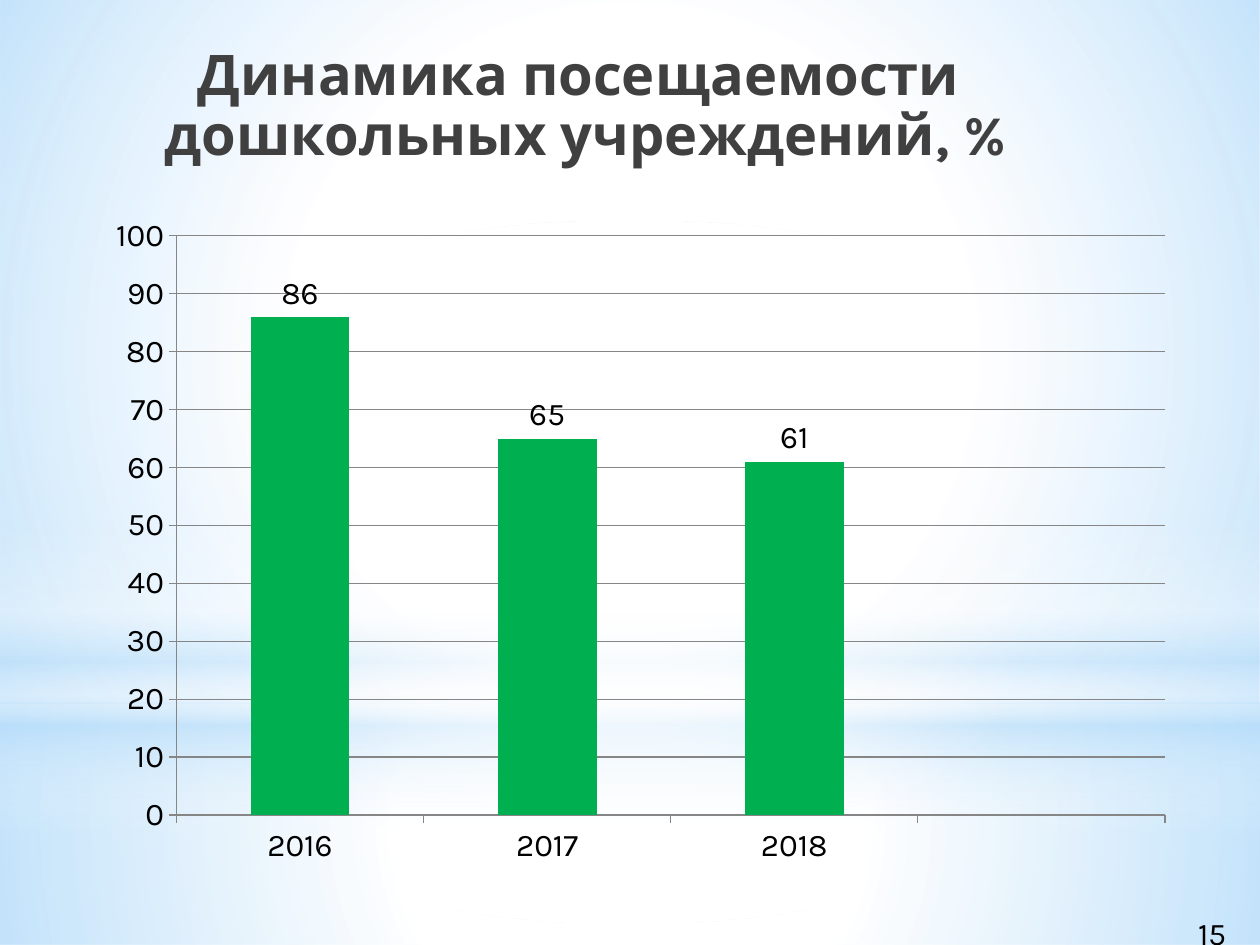
import dataclasses
import typing

import lxml.etree
import pptx
import pptx.chart.data
import pptx.dml.color
import pptx.enum.chart
import pptx.enum.shapes
import pptx.enum.text
import pptx.oxml
import pptx.oxml.ns
import pptx.util

WIDE, HIGH = 10, 7.5
FONT = "Karla"
WHITE, SKY, GREEN, GRAY, BLACK = "FFFFFF", "B4DCFA", "00B050", "868686", "000000"
KIND = pptx.enum.shapes.MSO_SHAPE


class Box(typing.NamedTuple):
    """Left, top, width and height as shares of the slide."""
    left: float
    top: float
    width: float
    height: float

    def place(self) -> list[int]:
        return [pptx.util.Inches(share * size)
                for share, size in zip(self, (WIDE, HIGH, WIDE, HIGH))]


class Stop(typing.NamedTuple):
    """Position in percent, colour and opacity in percent."""
    at: int
    color: str
    alpha: int


@dataclasses.dataclass
class Glow:
    box: Box
    stops: list[Stop]
    kind: KIND = KIND.RECTANGLE
    round: bool = True


GLOWS = [
    Glow(Box(0, 0.744, 1, 0.256),
         [Stop(0, WHITE, 91), Stop(37, WHITE, 76), Stop(100, SKY, 79)]),
    Glow(Box(0, 0, 1, 0.744),
         [Stop(0, WHITE, 89), Stop(48, WHITE, 62), Stop(100, SKY, 79)]),
    Glow(Box(0, 0.55, 1, 0.333),
         [Stop(0, WHITE, 0), Stop(29, WHITE, 30), Stop(45, SKY, 40),
          Stop(55, WHITE, 26), Stop(65, SKY, 60), Stop(100, WHITE, 0)], round=False),
    Glow(Box(0, 0.233, 1, 0.744),
         [Stop(0, WHITE, 100), Stop(56, WHITE, 0)], KIND.OVAL),
]


def rgb(color: str) -> pptx.dml.color.RGBColor:
    return pptx.dml.color.RGBColor.from_string(color)


def style(font, size: int, color: str, bold: bool = False) -> None:
    font.name, font.size, font.bold = FONT, pptx.util.Pt(size), bold
    font.color.rgb = rgb(color)


def add_glow(slide, glow: Glow) -> None:
    shape = slide.shapes.add_shape(glow.kind, *glow.box.place())
    shape.shadow.inherit = False
    shape.line.fill.background()
    stops = "".join(
        f'<a:gs pos="{stop.at * 1000}"><a:srgbClr val="{stop.color}">'
        f'<a:alpha val="{stop.alpha * 1000}"/></a:srgbClr></a:gs>'
        for stop in glow.stops)
    course = ('<a:path path="circle"><a:fillToRect l="50000" t="50000" r="50000" '
              'b="50000"/></a:path>' if glow.round else '<a:lin ang="5400000" scaled="0"/>')
    fill = pptx.oxml.parse_xml(
        f'<a:gradFill {pptx.oxml.ns.nsdecls("a")} rotWithShape="1">'
        f'<a:gsLst>{stops}</a:gsLst>{course}</a:gradFill>')
    shape.element.spPr.find(pptx.oxml.ns.qn("a:prstGeom")).addnext(fill)


def add_text(slide, box: Box, text: str, size: int, color: str, bold: bool = False):
    frame = slide.shapes.add_textbox(*box.place()).text_frame
    frame.word_wrap = True
    frame.text = text
    for run in frame.paragraphs[0].runs:
        style(run.font, size, color, bold)
    return frame


def set_plot(chart, area: Box) -> None:
    """Fix the inner plot area, in shares of the chart."""
    plot = chart.element.chart.plotArea
    for old in plot.findall(pptx.oxml.ns.qn("c:layout")):
        plot.remove(old)
    marks = '<c:layoutTarget val="inner"/><c:xMode val="edge"/><c:yMode val="edge"/>'
    sizes = "".join(f'<c:{key} val="{share}"/>' for key, share in zip("xywh", area))
    plot.insert(0, pptx.oxml.parse_xml(
        f'<c:layout {pptx.oxml.ns.nsdecls("c")}><c:manualLayout>'
        f'{marks}{sizes}</c:manualLayout></c:layout>'))


def add_bars(slide, box: Box) -> None:
    data = pptx.chart.data.CategoryChartData()
    data.categories = ["2016", "2017", "2018", ""]
    data.add_series("Series 1", [86, 65, 61, None])
    chart = slide.shapes.add_chart(
        pptx.enum.chart.XL_CHART_TYPE.COLUMN_CLUSTERED, *box.place(), data).chart
    chart.has_legend = chart.has_title = False
    style(chart.font, 18, BLACK)
    set_plot(chart, Box(0.075, 0.047, 0.905, 0.86))

    scale = chart.value_axis
    scale.minimum_scale, scale.maximum_scale, scale.major_unit = 0, 100, 10
    scale.has_major_gridlines = True
    for axis in (chart.category_axis, scale):
        axis.major_tick_mark = pptx.enum.chart.XL_TICK_MARK.OUTSIDE
    for line in (chart.category_axis.format.line, scale.format.line,
                 scale.major_gridlines.format.line):
        line.color.rgb = rgb(GRAY)
        line.width = pptx.util.Pt(0.75)

    plot = chart.plots[0]
    plot.gap_width, plot.vary_by_categories = 150, False
    fill = plot.series[0].format.fill
    fill.solid()
    fill.fore_color.rgb = rgb(GREEN)
    labels = plot.series[0].data_labels
    labels.show_value = True
    labels.position = pptx.enum.chart.XL_LABEL_POSITION.OUTSIDE_END
    style(labels.font, 18, BLACK)


def main() -> None:
    deck = pptx.Presentation()
    deck.slide_width, deck.slide_height = pptx.util.Inches(WIDE), pptx.util.Inches(HIGH)
    slide = deck.slides.add_slide(deck.slide_layouts[6])
    slide.background.fill.solid()
    slide.background.fill.fore_color.rgb = rgb(WHITE)
    for glow in GLOWS:
        add_glow(slide, glow)

    title = add_text(slide, Box(0.028, 0.048, 0.874, 0.136),
                     "Динамика посещаемости \vдошкольных учреждений, %", 32, "404040", True)
    title.vertical_anchor = pptx.enum.text.MSO_ANCHOR.BOTTOM
    title.paragraphs[0].alignment = pptx.enum.text.PP_ALIGN.CENTER
    title.paragraphs[0].line_spacing = 0.9

    add_bars(slide, Box(0.075, 0.216, 0.867, 0.713))
    add_text(slide, Box(0.941, 0.961, 0.059, 0.053), "15", 18, BLACK)
    deck.save("out.pptx")


if __name__ == "__main__":
    main()
